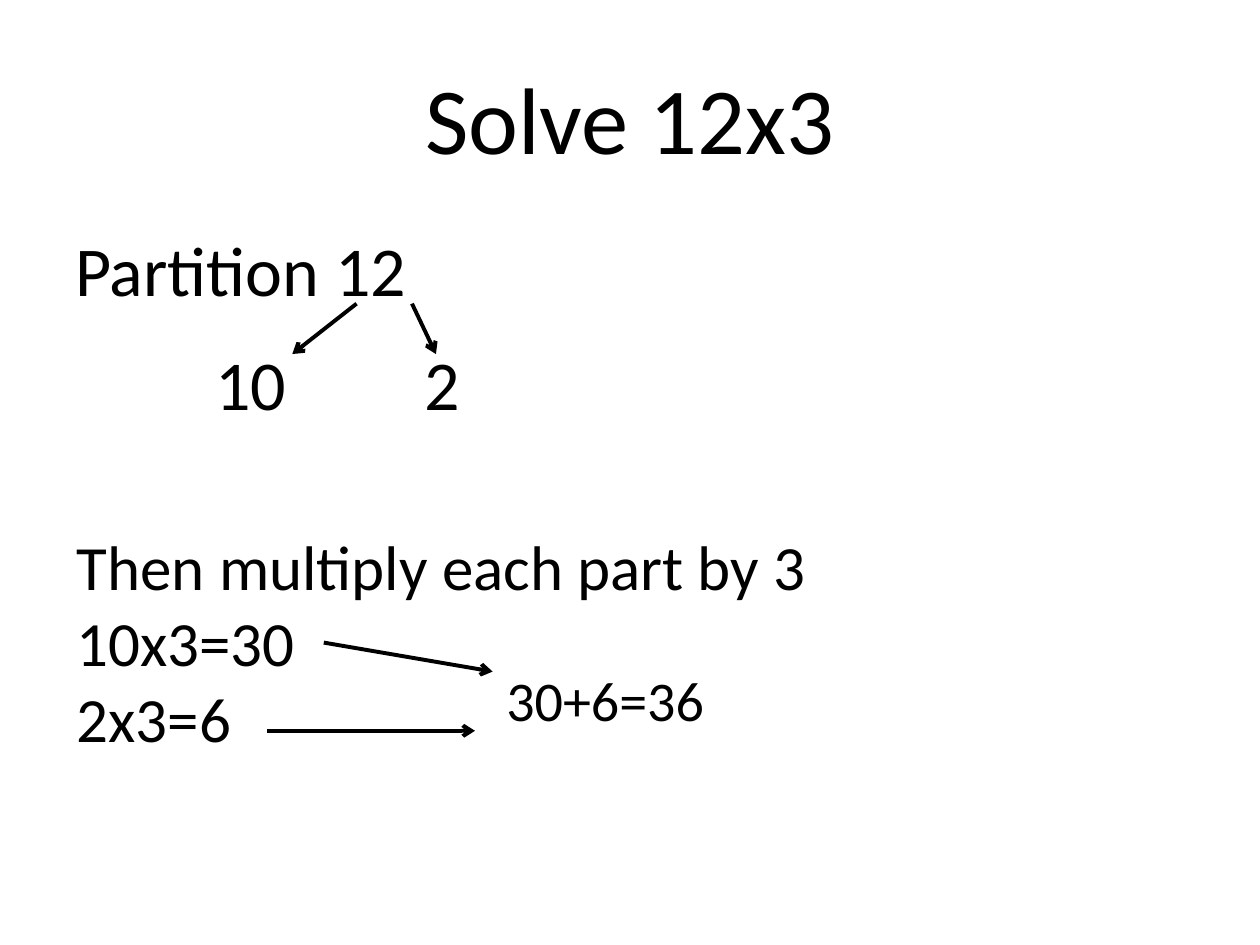
from dataclasses import dataclass

from lxml import etree
from pptx import Presentation
from pptx.dml.color import RGBColor
from pptx.enum.shapes import MSO_CONNECTOR as Connector
from pptx.enum.text import MSO_ANCHOR as Anchor, PP_ALIGN as Align
from pptx.oxml.ns import qn
from pptx.slide import Slide
from pptx.util import Inches, Pt

BLACK = RGBColor(0x00, 0x00, 0x00)
WHITE = RGBColor(0xFF, 0xFF, 0xFF)
FONT = "Calibri"


@dataclass
class Arrow:
    start: tuple[float, float]
    end: tuple[float, float]


PARTITION_ARROWS = [
    Arrow((2.83, 2.41), (2.32, 2.81)),
    Arrow((3.27, 2.41), (3.46, 2.81)),
]
SUM_ARROWS = [
    Arrow((2.57, 5.1), (3.91, 5.33)),
    Arrow((2.12, 5.8), (3.77, 5.8)),
]


def add_text(slide: Slide, text: str, left: float, top: float, width: float,
             height: float, *, size: float, align: Align = Align.LEFT,
             anchor: Anchor = Anchor.TOP) -> None:
    """Add a text box with one paragraph for each line of text."""
    box = slide.shapes.add_textbox(
        Inches(left), Inches(top), Inches(width), Inches(height))
    frame = box.text_frame
    frame.word_wrap = True
    frame.vertical_anchor = anchor
    frame.text = text
    for paragraph in frame.paragraphs:
        paragraph.alignment = align
        for run in paragraph.runs:
            run.font.name = FONT
            run.font.size = Pt(size)
            run.font.color.rgb = BLACK


def add_arrow(slide: Slide, arrow: Arrow) -> None:
    """Add a straight line with an open arrowhead at its end."""
    connector = slide.shapes.add_connector(
        Connector.STRAIGHT, *map(Inches, arrow.start + arrow.end))
    connector.line.color.rgb = BLACK
    connector.line.width = Pt(2.25)
    etree.SubElement(connector.line._get_or_add_ln(), qn("a:tailEnd"), type="arrow")
    etree.SubElement(connector._element.spPr, qn("a:effectLst"))


def main() -> None:
    presentation = Presentation()
    presentation.slide_width = Inches(10)
    presentation.slide_height = Inches(7.5)
    slide = presentation.slides.add_slide(presentation.slide_layouts[6])
    slide.background.fill.solid()
    slide.background.fill.fore_color.rgb = WHITE

    # Title
    add_text(slide, "Solve 12x3", 0.5, 0.3, 9, 1.25, size=54,
             align=Align.CENTER, anchor=Anchor.MIDDLE)

    # Partition of 12 into tens and ones
    add_text(slide, "Partition 12", 0.5, 1.75, 9, 4.95, size=40)
    add_text(slide, "2", 3.27, 2.65, 0.63, 0.77, size=40)
    add_text(slide, "10", 1.61, 2.65, 1.01, 0.77, size=40)
    for arrow in PARTITION_ARROWS:
        add_arrow(slide, arrow)

    # Products of the parts and their sum
    add_text(slide, "Then multiply each part by 3\n10x3=30\n2x3=6",
             0.51, 4.14, 6.38, 1.92, size=36)
    for arrow in SUM_ARROWS:
        add_arrow(slide, arrow)
    add_text(slide, "30+6=36", 3.92, 5.23, 3.78, 0.64, size=32)

    presentation.save("out.pptx")


if __name__ == "__main__":
    main()
